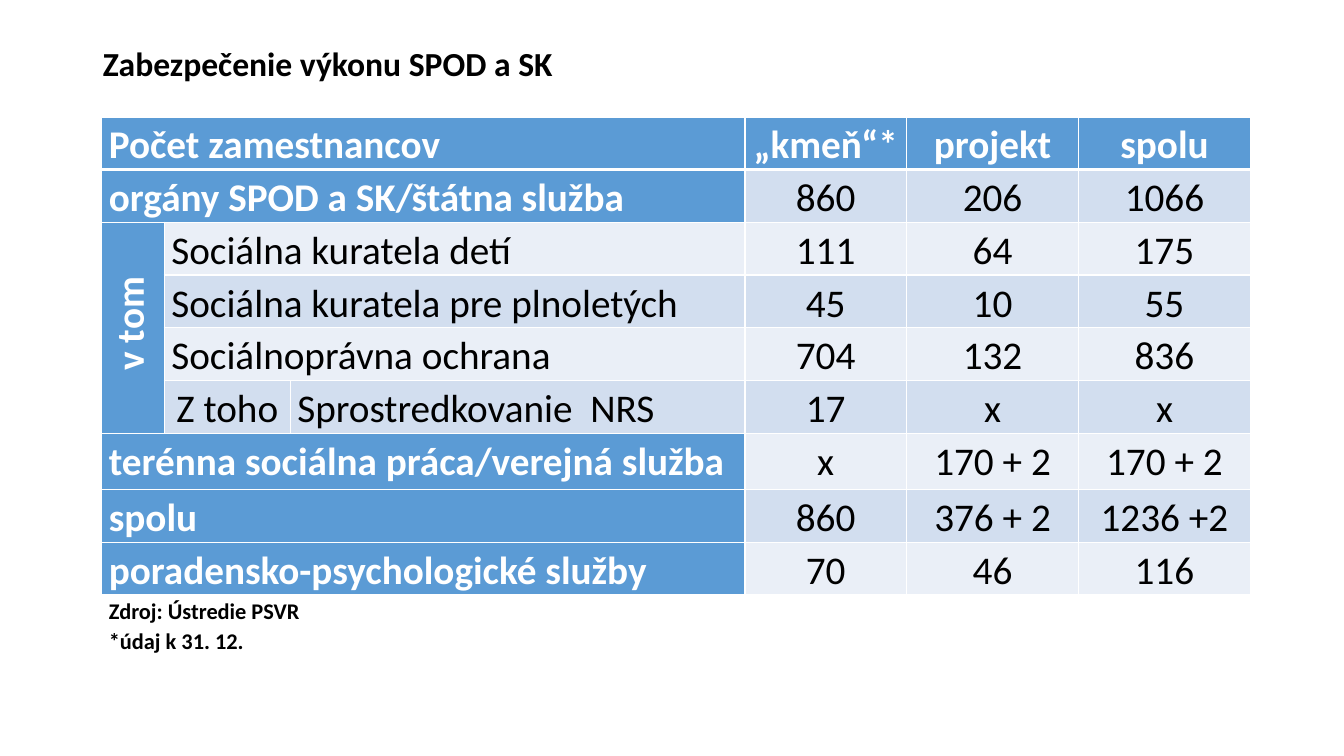
from dataclasses import dataclass

from lxml import etree
from pptx import Presentation
from pptx import util as u
from pptx.dml.color import RGBColor
from pptx.enum import text
from pptx.oxml import ns


@dataclass(frozen=True)
class Theme:
    font: str = "Calibri"
    black: str = "000000"
    white: str = "FFFFFF"
    accent: str = "5B9BD5"
    bands: tuple = ("EAEFF7", "D2DEEF")
    title_size: int = 24
    cell_size: int = 28
    note_size: int = 16


T = Theme()
COLS = [0.62, 1.25, 4.51, 1.6, 1.71, 1.7]
ROW_H, FIELD_ROW_H, NOTE_ROW_H = 0.52, 0.56, 1.04
FIELD_ROW = 6
LABELS = 3
ROWS = [
    ("Počet zamestnancov", "„kmeň“*", "projekt", "spolu"),
    ("orgány SPOD a\u00a0SK/štátna služba", "860", "206", "1066"),
    ("Sociálna kuratela detí", "111", "64", "175"),
    ("Sociálna kuratela pre plnoletých", "45", "10", "55"),
    ("Sociálnoprávna ochrana", "704", "132", "836"),
    ("Sprostredkovanie  NRS", "17", "x", "x"),
    ("terénna sociálna práca/verejná služba", "x", "170 + 2", "170 + 2"),
    ("spolu", "860", "376 + 2", "1236 +2"),
    ("poradensko-psychologické služby", "70", "46", "116"),
]
NOTES = ["Zdroj: Ústredie PSVR", "*údaj k\u00a031. 12."]
GROUP_FIRST, GROUP_LAST = 2, 5
CENTER, JUSTIFY = text.PP_ALIGN.CENTER, text.PP_ALIGN.JUSTIFY


def add_run(p, words, size, color, bold):
    r = p.add_run()
    r.text = words
    r.font.name = T.font
    r.font.size = u.Pt(size)
    r.font.bold = bold
    r.font.color.rgb = RGBColor.from_string(color)


def add_title(s, words):
    sp = s.shapes.title
    sp.left, sp.top = u.Inches(0.92), u.Inches(0.4)
    sp.width, sp.height = u.Inches(11.5), u.Inches(0.51)
    tf = sp.text_frame
    tf.auto_size = text.MSO_AUTO_SIZE.NONE
    tf.vertical_anchor = text.MSO_ANCHOR.MIDDLE
    p = tf.paragraphs[0]
    p.alignment = text.PP_ALIGN.LEFT
    p.line_spacing = 0.9
    add_run(p, words, T.title_size, T.black, True)


def set_borders(cell, bottom):
    tc_pr = cell._tc.get_or_add_tcPr()
    for side, width in (("L", 1), ("R", 1), ("T", 1), ("B", bottom)):
        ln = etree.SubElement(tc_pr, ns.qn(f"a:ln{side}"), w=str(u.Pt(width)))
        fill = etree.SubElement(ln, ns.qn("a:solidFill"))
        etree.SubElement(fill, ns.qn("a:srgbClr"), val=T.white)


def fill_cell(cell, lines, align, fill=None, size=T.cell_size,
              color=T.black, bold=False):
    cell.margin_left = cell.margin_right = u.Inches(0.07)
    cell.margin_top = cell.margin_bottom = 0
    if fill:
        cell.fill.solid()
        cell.fill.fore_color.rgb = RGBColor.from_string(fill)
    else:
        cell.fill.background()
    tf = cell.text_frame
    for i, words in enumerate(lines):
        p = tf.add_paragraph() if i else tf.paragraphs[0]
        p.alignment = align
        p.line_spacing = 1.1
        add_run(p, words, size, color, bold)


def fill_heading(cell, words, align):
    fill_cell(cell, [words], align, T.accent, color=T.white, bold=True)


def fill_group(table):
    cell = table.cell(GROUP_FIRST, 0)
    cell.merge(table.cell(GROUP_LAST, 0))
    fill_heading(cell, "v tom", CENTER)
    cell._tc.get_or_add_tcPr().set("vert", "vert270")
    p_pr = cell.text_frame.paragraphs[0]._p.get_or_add_pPr()
    p_pr.set("marL", str(u.Inches(0.08)))


def fill_row(table, row, label, values):
    band = T.bands[row % 2]
    in_group = GROUP_FIRST <= row <= GROUP_LAST
    first = 1 if in_group else 0
    if row == GROUP_LAST:
        fill_cell(table.cell(row, first), ["Z toho"], CENTER, band)
        first += 1
    cell = table.cell(row, first)
    if first < LABELS - 1:
        cell.merge(table.cell(row, LABELS - 1))
    if in_group:
        fill_cell(cell, [label], JUSTIFY, band)
    else:
        fill_heading(cell, label, JUSTIFY)
    for col, value in enumerate(values, LABELS):
        if row == 0:
            fill_heading(table.cell(row, col), value, CENTER)
        else:
            fill_cell(table.cell(row, col), [value], CENTER, band)


def add_staff_table(s):
    heights = [ROW_H] * len(ROWS) + [NOTE_ROW_H]
    heights[FIELD_ROW] = FIELD_ROW_H
    frame = s.shapes.add_table(
        len(heights), len(COLS), u.Inches(1.01), u.Inches(1.16),
        u.Inches(sum(COLS)), u.Inches(sum(heights)))
    table = frame.table
    table.first_row = table.horz_banding = False
    for column, width in zip(table.columns, COLS):
        column.width = u.Inches(width)
    for i, height in enumerate(heights):
        table.rows[i].height = u.Inches(height)
        for cell in table.rows[i].cells:
            set_borders(cell, 1 if i else 3)
    for i, (label, *values) in enumerate(ROWS):
        fill_row(table, i, label, values)
    fill_group(table)
    note = table.cell(len(ROWS), 0)
    note.merge(table.cell(len(ROWS), len(COLS) - 1))
    fill_cell(note, NOTES, JUSTIFY, size=T.note_size, bold=True)


def main():
    prs = Presentation()
    prs.slide_width, prs.slide_height = u.Inches(13.33), u.Inches(7.5)
    s = prs.slides.add_slide(prs.slide_layouts[5])
    add_title(s, "Zabezpečenie výkonu SPOD a SK")
    add_staff_table(s)
    prs.save("out.pptx")


if __name__ == "__main__":
    main()
